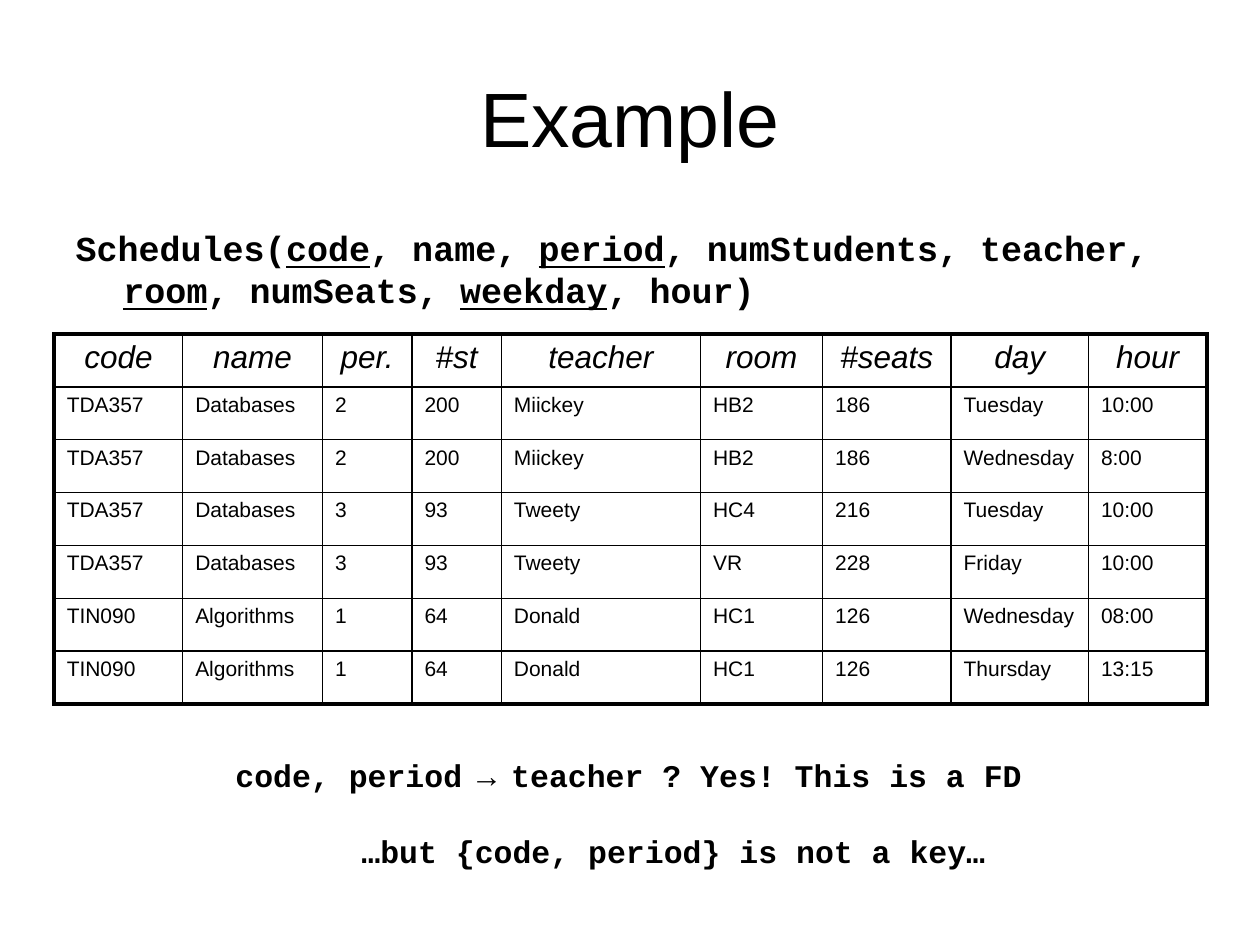
from lxml.etree import SubElement
from pptx import Presentation
from pptx.dml.color import RGBColor
from pptx.enum.text import MSO_ANCHOR, MSO_AUTO_SIZE, PP_ALIGN
from pptx.oxml import parse_xml
from pptx.oxml.ns import nsdecls, qn
from pptx.util import Inches, Pt

SANS, MONO, BLACK = "Arial", "Courier New", "000000"
THIN, THICK = 1, 2.25
COLS = [1.02, 1.11, 0.71, 0.71, 1.58, 0.97, 1.02, 1.09, 0.94]
ROW = 0.42
ROWS = [
    ["code", "name", "per.", "#st", "teacher", "room", "#seats", "day", "hour"],
    ["TDA357", "Databases", "2", "200", "Miickey", "HB2", "186", "Tuesday", "10:00"],
    ["TDA357", "Databases", "2", "200", "Miickey", "HB2", "186", "Wednesday", "8:00"],
    ["TDA357", "Databases", "3", "93", "Tweety", "HC4", "216", "Tuesday", "10:00"],
    ["TDA357", "Databases", "3", "93", "Tweety", "VR", "228", "Friday", "10:00"],
    ["TIN090", "Algorithms", "1", "64", "Donald", "HC1", "126", "Wednesday", "08:00"],
    ["TIN090", "Algorithms", "1", "64", "Donald", "HC1", "126", "Thursday", "13:15"],
]
SCHEMA = ["Schedules(", "code", ", name, ", "period", ", numStudents, teacher, ",
          "room", ", numSeats, ", "weekday", ", hour)"]


def color(hex_code):
    """Turn a hex string into a colour."""
    return RGBColor.from_string(hex_code)


def style(r, size, name=SANS, **flags):
    """Format one run; flags are bold, italic and underline."""
    r.font.size, r.font.name = Pt(size), name
    r.font.color.rgb = color(BLACK)
    for flag, value in flags.items():
        setattr(r.font, flag, value)


def add_run(p, text, size, name=SANS, **flags):
    """Append a formatted run to a paragraph."""
    r = p.add_run()
    r.text = text
    style(r, size, name, **flags)


def place(sp, left, top, width, height):
    """Move and size a shape, in inches."""
    sp.left, sp.top = Inches(left), Inches(top)
    sp.width, sp.height = Inches(width), Inches(height)


def indent(p, margin, first=0):
    """Set the left margin and first-line indent, in inches."""
    pPr = p._p.get_or_add_pPr()
    pPr.set("marL", str(Inches(margin)))
    pPr.set("indent", str(Inches(first)))
    return pPr


def add_title(s, text):
    """Fill the title placeholder."""
    sp = s.shapes.title
    place(sp, 0.5, 0.3, 9, 1.25)
    sp.text_frame.text = text
    sp.text_frame.vertical_anchor = MSO_ANCHOR.MIDDLE
    p = sp.text_frame.paragraphs[0]
    p.alignment = PP_ALIGN.CENTER
    style(p.runs[0], 44)


def add_schema(s, parts):
    """Fill the body with the relation, underlining every second part."""
    sp = s.placeholders[1]
    place(sp, 0.5, 1.75, 8.83, 0.9)
    sp.text_frame.auto_size = MSO_AUTO_SIZE.NONE
    p = sp.text_frame.paragraphs[0]
    SubElement(indent(p, 0.38, -0.38), qn("a:buNone"))
    for i, part in enumerate(parts):
        add_run(p, part, 20, MONO, bold=True, underline=i % 2 == 1)


def set_borders(cell, **widths):
    """Draw the cell's borders, in the order L, R, T, B."""
    tcPr = cell._tc.get_or_add_tcPr()
    for i, (side, width) in enumerate(widths.items()):
        tcPr.insert(i, parse_xml(
            f'<a:ln{side} {nsdecls("a")} w="{Pt(width)}"><a:solidFill>'
            f'<a:srgbClr val="{BLACK}"/></a:solidFill></a:ln{side}>'))


def add_grid(s, rows):
    """Add the table with a thick frame and thin inner lines."""
    table = s.shapes.add_table(len(rows), len(COLS), Inches(0.43), Inches(2.65),
                               Inches(sum(COLS)), Inches(ROW * len(rows))).table
    table.first_row = table.horz_banding = False
    for column, width in zip(table.columns, COLS):
        column.width = Inches(width)
    last_row, last_col = len(rows) - 1, len(COLS) - 1
    for i, values in enumerate(rows):
        table.rows[i].height = Inches(ROW)
        for j, value in enumerate(values):
            cell = table.cell(i, j)
            cell.fill.background()
            cell.text = value
            p = cell.text_frame.paragraphs[0]
            p.alignment = PP_ALIGN.LEFT if i else PP_ALIGN.CENTER
            style(p.runs[0], 12 if i else 18, italic=i == 0)
            set_borders(cell, L=THIN if j else THICK,
                        R=THICK if j == last_col else THIN,
                        T=THIN if i else THICK,
                        B=THICK if i == last_row else THIN)


def add_conclusion(s):
    """Add the two closing lines about the dependency."""
    sp = s.shapes.add_textbox(0, 0, 0, 0)
    place(sp, 1.77, 5.95, 6.46, 1.01)
    tf = sp.text_frame
    tf.word_wrap = True
    p = tf.paragraphs[0]
    add_run(p, "code, period", 18, MONO, bold=True)
    add_run(p, " → ", 18)
    add_run(p, "teacher ? Yes! This is a FD", 18, MONO, bold=True)
    p = tf.add_paragraph()
    p.space_before = Pt(22)
    indent(p, 1)
    add_run(p, "…but {code, period} is not a key…", 18, MONO, bold=True)


def main():
    """Build the slide and save it."""
    prs = Presentation()
    prs.slide_width, prs.slide_height = Inches(10), Inches(7.5)
    s = prs.slides.add_slide(prs.slide_layouts[1])
    add_title(s, "Example")
    add_schema(s, SCHEMA)
    add_grid(s, ROWS)
    add_conclusion(s)
    prs.save("out.pptx")


if __name__ == "__main__":
    main()
